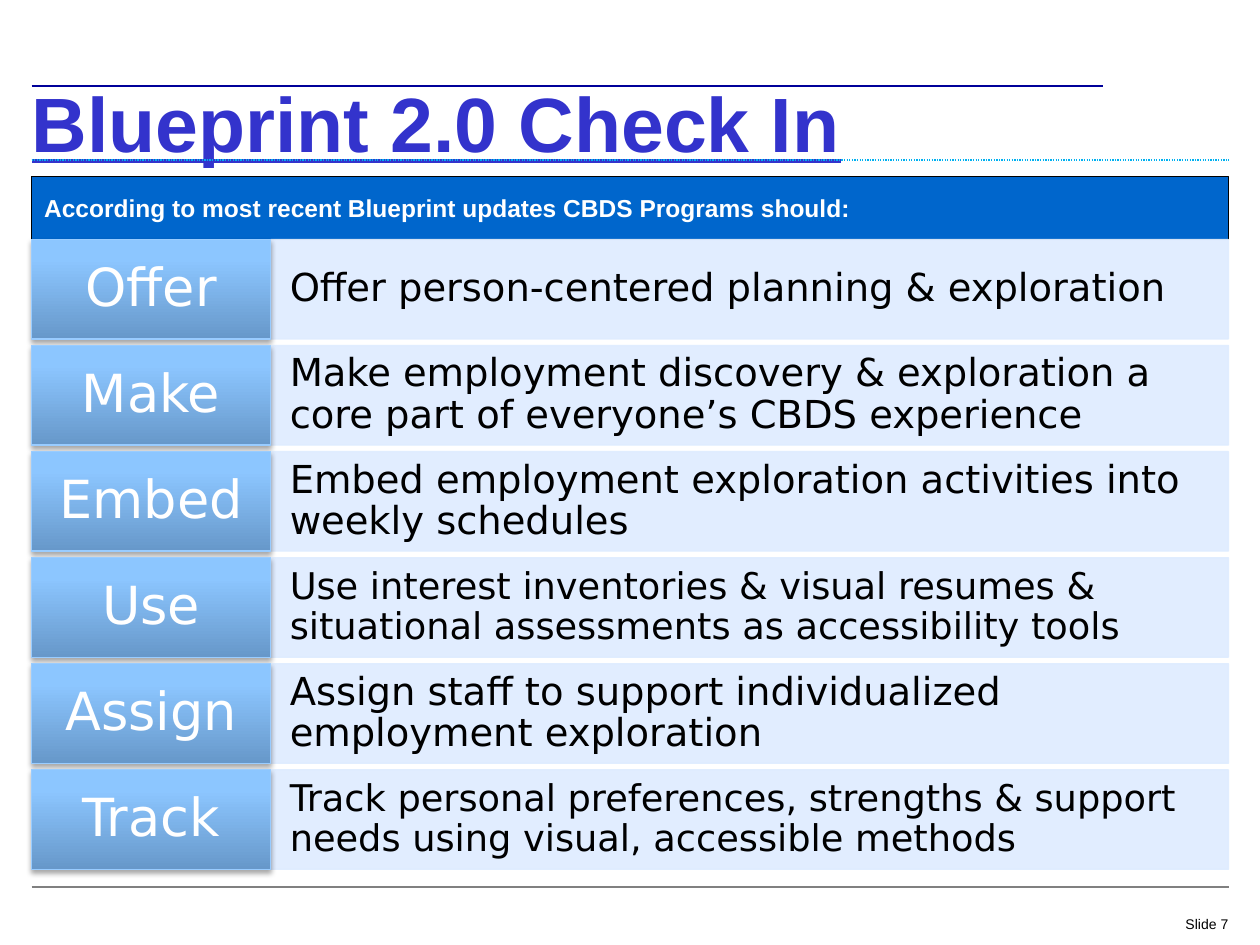
import copy
import lxml.etree
import pptx
import pptx.dml.color
import pptx.enum.dml
import pptx.enum.shapes
import pptx.enum.text
import pptx.oxml.ns
import pptx.util

TITLE = "Blueprint 2.0 Check In"
LEAD = "According to most recent Blueprint updates CBDS Programs should:"
FOOT = "Slide 7"
ROWS = [  # verb, action, text size of the action
    ("Offer", "Offer person-centered planning & exploration", 22),
    ("Make", "Make employment discovery & exploration a core part of "
     "everyone’s CBDS experience", 22),
    ("Embed", "Embed employment exploration activities into weekly schedules", 22),
    ("Use", "Use interest inventories & visual resumes & situational "
     "assessments as accessibility tools", 21),
    ("Assign", "Assign staff to support individualized employment exploration", 22),
    ("Track", "Track personal preferences, strengths & support needs using "
     "visual, accessible methods", 21),
]
HUES = {
    "title": "3333CC", "halo": "CCCCFF", "lead": "0066CC", "black": "000000",
    "white": "FFFFFF", "pale": "DEECFF", "edge": "99CCFF", "navy": "000099",
    "cyan": "00B0F0", "gray": "808080",
}
BLEND = [(0, "6798CA"), (0.8, "8CC6FF"), (1, "8EC7FF")]

LEFT, WIDE = 18, 684
VERB_W = 136.8
TOP, END, ROW_H = 136.8, 496.8, 56.9
STEP = (END - TOP - ROW_H) / (len(ROWS) - 1)
RULES = [  # y, length, colour, weight, dash
    (49, 612, "navy", 1, None),
    (91.4, WIDE, "cyan", 0.75, pptx.enum.dml.MSO_LINE.ROUND_DOT),
    (506.9, WIDE, "gray", 0.75, None),
]

Pt = pptx.util.Pt
ALIGN = pptx.enum.text.PP_ALIGN
SHAPE = pptx.enum.shapes.MSO_SHAPE.RECTANGLE


def hue(name):
    return pptx.dml.color.RGBColor.from_string(HUES.get(name, name))


def add_tag(node, tag, **attrs):
    return lxml.etree.SubElement(node, pptx.oxml.ns.qn(tag), attrs)


def place(shape, x, y, w, h):
    shape.left, shape.top, shape.width, shape.height = map(Pt, (x, y, w, h))


def write(shape, text, size, color, font="Arial", align=ALIGN.LEFT,
          pad=0, bold=False, lead=1.0):
    """Put one run of text, centred in height, in a shape."""
    frame = shape.text_frame
    frame.word_wrap = True
    frame.auto_size = pptx.enum.text.MSO_AUTO_SIZE.NONE
    frame.vertical_anchor = pptx.enum.text.MSO_ANCHOR.MIDDLE
    frame.margin_left = frame.margin_right = Pt(pad)
    frame.margin_top = frame.margin_bottom = 0
    para = frame.paragraphs[0]
    para.alignment = align
    para.line_spacing = lead
    para.space_before = Pt(0)
    run = para.add_run()
    run.text = text
    run.font.name, run.font.size, run.font.bold = font, Pt(size), bold
    run.font.color.rgb = hue(color)
    return para, run


def paint(shape, fill, line, weight=0.75):
    shape.fill.solid()
    shape.fill.fore_color.rgb = hue(fill)
    shape.line.color.rgb = hue(line)
    shape.line.width = Pt(weight)


def blend(shape):
    """Give a shape the vertical gradient and its edge."""
    shape.fill.gradient()
    shape.fill.gradient_angle = 90
    last = shape.fill.gradient_stops[1]._gs
    last.addnext(copy.deepcopy(last))
    for stop, (pos, color) in zip(shape.fill.gradient_stops, BLEND):
        stop.position = pos
        stop.color.rgb = hue(color)
    shape.line.color.rgb = hue("edge")
    shape.line.width = Pt(0.75)


def shade(shape):
    """Add a soft shadow straight below a shape."""
    list_ = shape._element.spPr.find(pptx.oxml.ns.qn("a:effectLst"))
    drop = add_tag(list_, "a:outerShdw", blurRad=str(Pt(3.1)),
                   dist=str(Pt(1.8)), dir="5400000", rotWithShape="0")
    tint = add_tag(drop, "a:srgbClr", val=HUES["black"])
    add_tag(tint, "a:alpha", val="35000")


def add_rule(slide, y, length, color, weight, dash):
    rule = slide.shapes.add_connector(
        pptx.enum.shapes.MSO_CONNECTOR.STRAIGHT,
        Pt(LEFT), Pt(y), Pt(LEFT + length), Pt(y))
    rule.line.color.rgb = hue(color)
    rule.line.width = Pt(weight)
    if dash:
        rule.line.dash_style = dash
    add_tag(rule._element.spPr, "a:effectLst")


def add_box(slide, x, y, w):
    box = slide.shapes.add_shape(SHAPE, Pt(x), Pt(y), Pt(w), Pt(ROW_H))
    box.shadow.inherit = False
    return box


def add_row(slide, y, verb, action, size):
    wide = add_box(slide, LEFT + VERB_W, y, WIDE - VERB_W)
    paint(wide, "pale", "pale")
    for tint in wide._element.spPr.iter(pptx.oxml.ns.qn("a:srgbClr")):
        add_tag(tint, "a:alpha", val="90000")
    write(wide, action, size, "black", "DejaVu Sans", pad=10.8, lead=0.9)

    head = add_box(slide, LEFT, y, VERB_W)
    blend(head)
    shade(head)
    write(head, verb, 30, "white", "DejaVu Sans", ALIGN.CENTER, 7.2, lead=0.9)


def main():
    deck = pptx.Presentation()
    deck.slide_width, deck.slide_height = Pt(720), Pt(540)
    slide = deck.slides.add_slide(deck.slide_layouts[1])
    title, body = slide.placeholders

    place(title, LEFT, 51.8, 612, 36)
    run = write(title, TITLE, 44, "title", bold=True)[1]
    run.font.underline = True
    rim = lxml.etree.Element(pptx.oxml.ns.qn("a:ln"), w=str(Pt(1.75)))
    add_tag(add_tag(rim, "a:solidFill"), "a:srgbClr", val=HUES["halo"])
    run._r.get_or_add_rPr().insert(0, rim)

    place(body, LEFT, 100.8, WIDE, 36)
    paint(body, "lead", "black")
    para = write(body, LEAD, 14, "white", pad=7.2, bold=True)[0]
    props = para._p.get_or_add_pPr()
    props.set("marL", "0")
    props.set("indent", "0")
    add_tag(props, "a:buNone")

    for rule in RULES:
        add_rule(slide, *rule)
    for i, row in enumerate(ROWS):
        add_row(slide, TOP + i * STEP, *row)

    foot = slide.shapes.add_textbox(Pt(558), Pt(520.6), Pt(144), Pt(14.4))
    write(foot, FOOT, 8, "black", align=ALIGN.RIGHT)
    deck.save("out.pptx")


if __name__ == "__main__":
    main()
